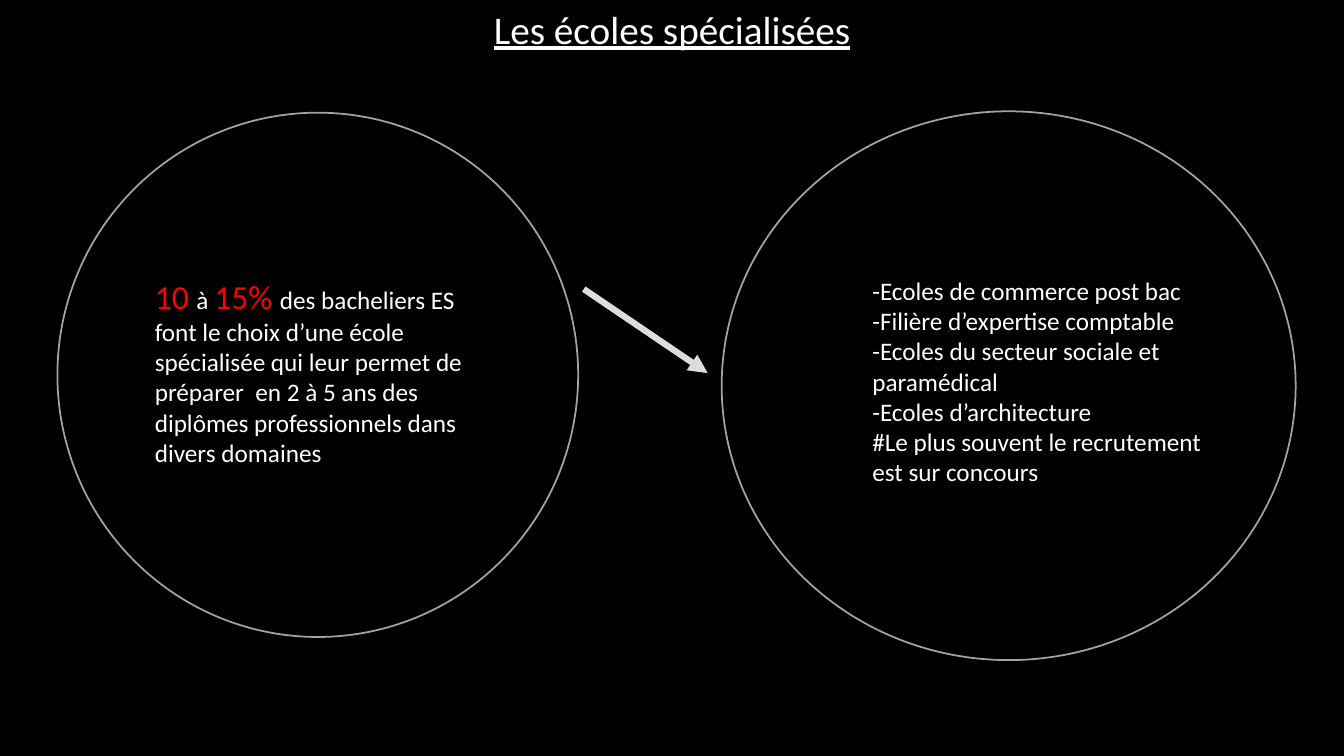
from lxml import etree
from pptx import Presentation
from pptx.dml.color import RGBColor
from pptx.enum.shapes import MSO_CONNECTOR, MSO_SHAPE
from pptx.enum.text import MSO_ANCHOR, PP_ALIGN
from pptx.oxml.ns import qn
from pptx.util import Pt

RECT = MSO_SHAPE.RECTANGLE
OVAL = MSO_SHAPE.OVAL
STRAIGHT = MSO_CONNECTOR.STRAIGHT
TOP = MSO_ANCHOR.TOP
LEFT = PP_ALIGN.LEFT
CENTER = PP_ALIGN.CENTER

BLACK = RGBColor(0x00, 0x00, 0x00)
WHITE = RGBColor(0xFF, 0xFF, 0xFF)
RED = RGBColor(0xFF, 0x00, 0x00)
GREY = RGBColor(0xA3, 0xA3, 0xA3)
SILVER = RGBColor(0xDD, 0xDD, 0xDD)


class Board:
    """Draws the elements of one slide in a shared style."""

    def __init__(self, slide, font="Calibri"):
        self.shapes = slide.shapes
        self.font = font

    def text(self, frame, lines, align=LEFT, under=None):
        frame.word_wrap = True
        frame.vertical_anchor = TOP
        for i, line in enumerate(lines):
            para = frame.paragraphs[0] if i == 0 else frame.add_paragraph()
            para.alignment = align
            for words, size, color in line:
                run = para.add_run()
                run.text = words
                run.font.name = self.font
                run.font.size = Pt(size)
                run.font.color.rgb = color
                run.font.underline = under

    def panel(self, box, title):
        rect = self.shapes.add_shape(RECT, *map(Pt, box))
        rect.shadow.inherit = False
        rect.fill.solid()
        rect.fill.fore_color.rgb = BLACK
        rect.line.fill.background()
        self.text(rect.text_frame, [[(title, 28, WHITE)]], CENTER, True)

    def circle(self, ring, box, lines):
        group = self.shapes.add_group_shape()
        oval = group.shapes.add_shape(OVAL, *map(Pt, ring))
        oval.shadow.inherit = False
        oval.fill.background()
        oval.line.color.rgb = GREY
        oval.line.width = Pt(1.25)
        label = group.shapes.add_textbox(*map(Pt, box))
        self.text(label.text_frame, lines)

    def arrow(self, start, end):
        link = self.shapes.add_connector(STRAIGHT, *map(Pt, start + end))
        link.line.color.rgb = SILVER
        link.line.width = Pt(4.5)
        props = link._element.spPr
        etree.SubElement(props.find(qn("a:ln")), qn("a:tailEnd"), type="triangle")
        etree.SubElement(props, qn("a:effectLst"))


def main():
    deck = Presentation()
    deck.slide_width, deck.slide_height = Pt(960), Pt(540)
    board = Board(deck.slides.add_slide(deck.slide_layouts[6]))

    board.panel((0, 0, 960, 550), "Les écoles spécialisées")
    schools = [
        "-Ecoles de commerce post bac",
        "-Filière d’expertise comptable",
        "-Ecoles du secteur sociale et paramédical",
        "-Ecoles d’architecture",
        "#Le plus souvent le recrutement est sur concours",
    ]
    board.circle((515.5, 79.5, 410, 392), (616, 193, 259, 160),
                 [[(words, 18, WHITE)] for words in schools])
    share = [
        ("10 ", 24, RED),
        ("à ", 18, WHITE),
        ("15% ", 24, RED),
        ("des bacheliers ES font le choix d’une école spécialisée qui leur "
         "permet de préparer  en 2 à 5 ans des diplômes professionnels dans "
         "divers domaines", 18, WHITE),
    ]
    board.circle((41, 80.5, 372, 374.5), (103.5, 193.5, 262, 145.5), [share])
    board.arrow((417, 206.5), (505.5, 266.5))
    deck.save("out.pptx")


if __name__ == "__main__":
    main()
